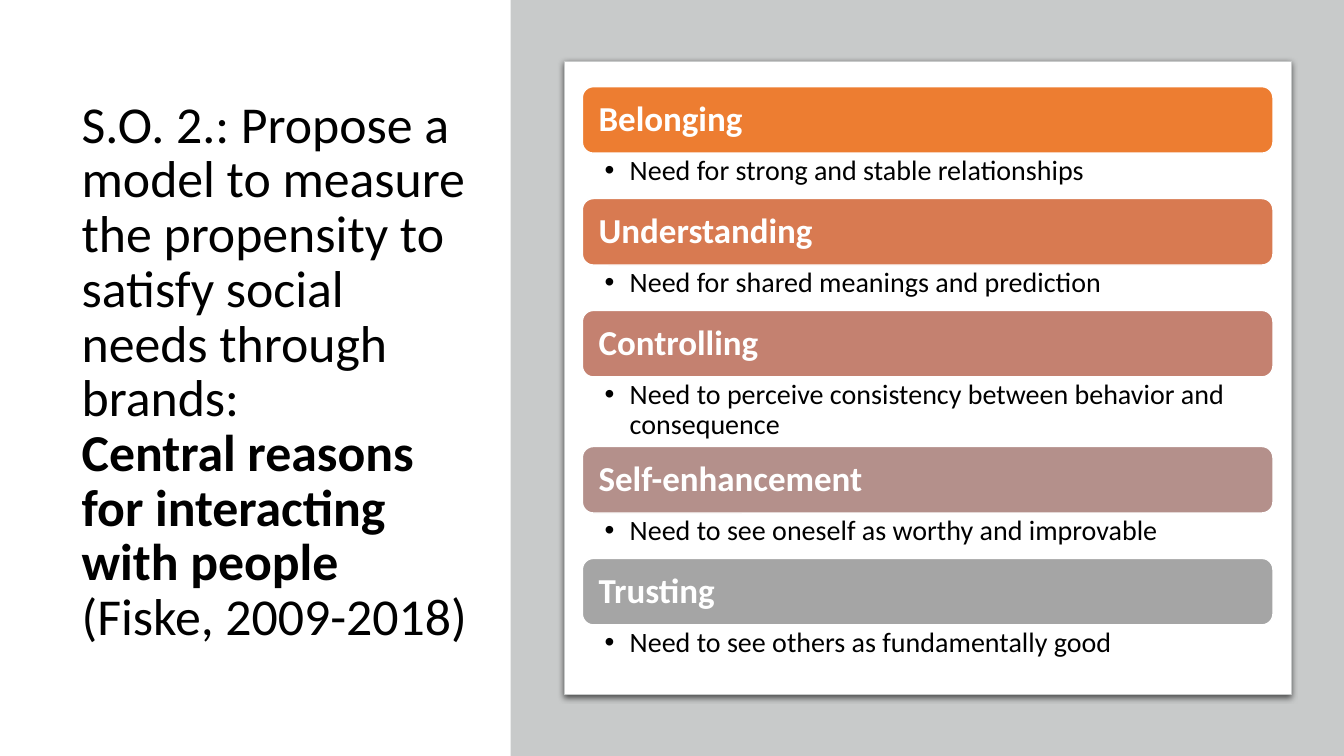
from lxml import etree
from pptx import Presentation
from pptx.dml.color import RGBColor
from pptx.enum.shapes import MSO_SHAPE
from pptx.enum.text import MSO_ANCHOR, MSO_AUTO_SIZE, PP_ALIGN
from pptx.oxml import parse_xml
from pptx.oxml.ns import nsdecls, qn
from pptx.util import Inches, Pt

RECT, ROUNDED = MSO_SHAPE.RECTANGLE, MSO_SHAPE.ROUNDED_RECTANGLE
MIDDLE, TOP, LEFT = MSO_ANCHOR.MIDDLE, MSO_ANCHOR.TOP, PP_ALIGN.LEFT
NO_FIT = MSO_AUTO_SIZE.NONE

WIDTH, HEIGHT = 13.33, 7.5
FONT = "Calibri"
BLACK, WHITE, GRAY = "000000", "FFFFFF", "C8CACA"
BAR_HEIGHT = 0.66
ONE_LINE, TWO_LINES = 0.45, 0.69

TITLE_SPANS = [
    ("S.O. 2.: Propose a model to measure the propensity to satisfy social "
     "needs through brands:\v", False),
    ("Central reasons for interacting with people", True),
    (" (Fiske, 2009-2018)", False),
]
REASONS = [
    ("Belonging", "Need for strong and stable relationships", "ED7D31", ONE_LINE),
    ("Understanding", "Need for shared meanings and prediction", "D87A51", ONE_LINE),
    ("Controlling", "Need to perceive consistency between behavior and consequence",
     "C48170", TWO_LINES),
    ("Self-enhancement", "Need to see oneself as worthy and improvable", "B4908B", ONE_LINE),
    ("Trusting", "Need to see others as fundamentally good", "A5A5A5", ONE_LINE),
]


def color(hex_code):
    return RGBColor.from_string(hex_code)


def set_all(target, values):
    for name, value in values.items():
        setattr(target, name, value)


def inches(box):
    return [Inches(length) for length in box]


def write(shape, spans, size, hex_code, margins, anchor=MIDDLE, spacing=0.9):
    """Fill a shape with one paragraph of (text, bold) spans and return it."""
    left, top, right, bottom = inches(margins)
    frame = shape.text_frame
    set_all(frame, {"word_wrap": True, "auto_size": NO_FIT, "vertical_anchor": anchor,
                    "margin_left": left, "margin_top": top,
                    "margin_right": right, "margin_bottom": bottom})
    para = frame.paragraphs[0]
    set_all(para, {"alignment": LEFT, "line_spacing": spacing})
    for text, bold in spans:
        pieces = text.split("\v")
        for index, piece in enumerate(pieces):
            if index:
                para.add_line_break()
            if piece:
                span = para.add_run()
                span.text = piece
                set_all(span.font, {"name": FONT, "size": Pt(size), "bold": bold})
                span.font.color.rgb = color(hex_code)
    return para


def add_block(page, kind, box, fill, line=None, line_width=1):
    block = page.shapes.add_shape(kind, *inches(box))
    block.shadow.inherit = False
    block.fill.solid()
    block.fill.fore_color.rgb = color(fill)
    if line:
        block.line.color.rgb = color(line)
        block.line.width = Pt(line_width)
    else:
        block.line.fill.background()
    return block


def add_drop_shadow(shape):
    effects = shape.element.spPr.find(qn("a:effectLst"))
    effects.append(parse_xml(
        f'<a:outerShdw {nsdecls("a")} blurRad="{Pt(4.5)}" dist="{Pt(1.5)}" dir="5400000" '
        'algn="ctr" rotWithShape="0"><a:srgbClr val="000000"><a:alpha val="63000"/>'
        '</a:srgbClr></a:outerShdw>'))


def add_bullet(para, indent):
    properties = para._p.get_or_add_pPr()
    properties.set("marL", str(Inches(indent)))
    properties.set("indent", str(-Inches(indent)))
    etree.SubElement(properties, qn("a:buFont")).set("typeface", "Arial")
    etree.SubElement(properties, qn("a:buChar")).set("char", "•")


def place_title(page, box):
    title = page.shapes.title
    set_all(title, dict(zip(("left", "top", "width", "height"), inches(box))))
    write(title, TITLE_SPANS, 37, BLACK, (0.1, 0.05, 0.05, 0.05), spacing=0.88)


def add_reason(page, box, heading, need, fill):
    """Place a coloured heading bar with its bulleted need underneath."""
    left, top, width, height = box
    bar = add_block(page, ROUNDED, (left, top, width, BAR_HEIGHT), fill, WHITE)
    write(bar, [(heading, True)], 25, WHITE, (0.13, 0.1, 0.13, 0.1))
    need_box = page.shapes.add_textbox(
        *inches((left, top + BAR_HEIGHT, width, height - BAR_HEIGHT)))
    para = write(need_box, [(need, False)], 20, BLACK, (0.22, 0.03, 0.19, 0.03), TOP)
    add_bullet(para, 0.25)


def add_reasons_card(page, box):
    left, top, width, height = box
    card = add_block(page, ROUNDED, box, WHITE, GRAY, 0.75)
    card.adjustments[0] = 0
    add_drop_shadow(card)
    side = 0.18
    row_top = top + 0.25
    for heading, need, fill, need_height in REASONS:
        row_height = BAR_HEIGHT + need_height
        add_reason(page, (left + side, row_top, width - 2 * side, row_height),
                   heading, need, fill)
        row_top += row_height


def main():
    deck = Presentation()
    deck.slide_width, deck.slide_height = inches((WIDTH, HEIGHT))
    page = deck.slides.add_slide(deck.slide_layouts[5])
    panel_left = 0.38 * WIDTH
    place_title(page, (0.71, 0.69, 4.01, 6.02))
    add_block(page, RECT, (panel_left, 0, WIDTH - panel_left, HEIGHT), GRAY)
    add_reasons_card(page, (panel_left + 0.53, 0.61, 7.21, 6.28))
    deck.save("out.pptx")


if __name__ == "__main__":
    main()
